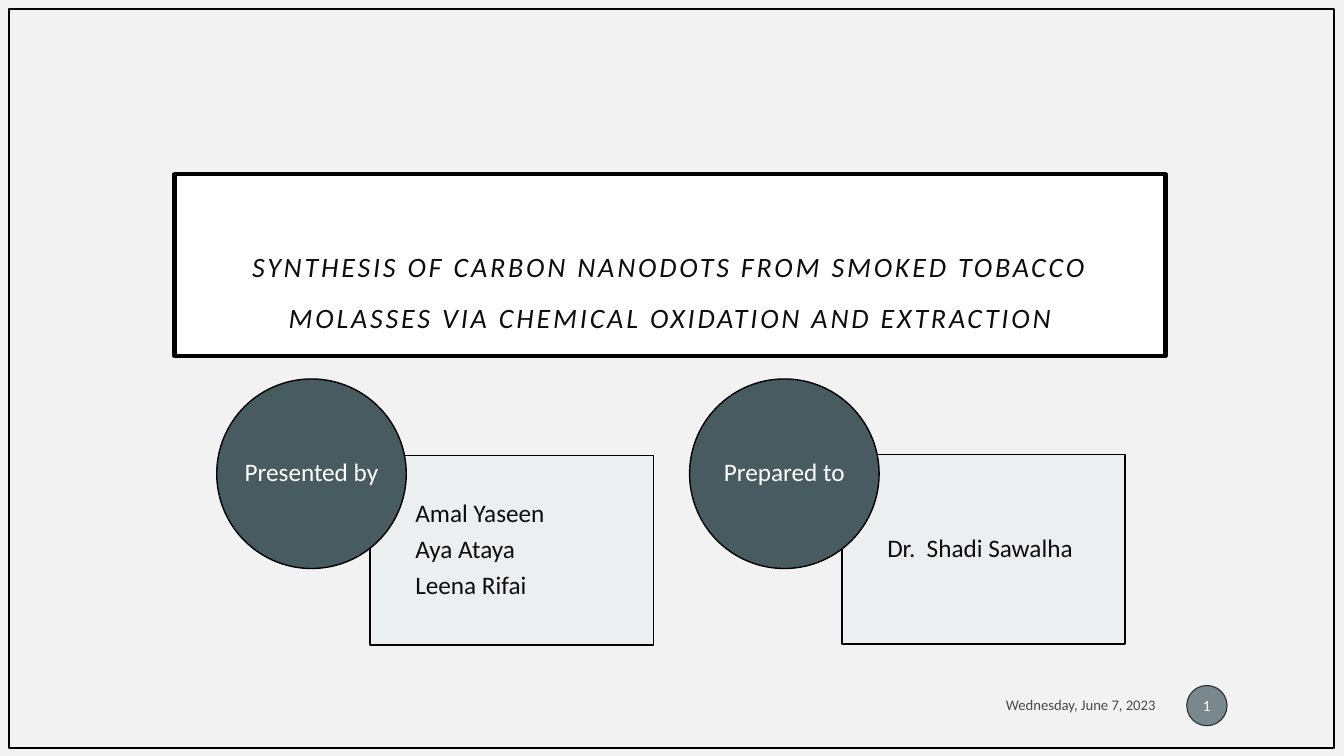
from lxml import etree
from pptx import Presentation
from pptx.dml.color import RGBColor
from pptx.enum.shapes import MSO_SHAPE
from pptx.enum.text import MSO_ANCHOR, PP_ALIGN
from pptx.oxml.ns import qn
from pptx.util import Inches, Pt

RECT, OVAL = MSO_SHAPE.RECTANGLE, MSO_SHAPE.OVAL
LEFT, CENTER, RIGHT = PP_ALIGN.LEFT, PP_ALIGN.CENTER, PP_ALIGN.RIGHT
MIDDLE = MSO_ANCHOR.MIDDLE

BACKGROUND = RGBColor(0xF2, 0xF2, 0xF2)
WHITE = RGBColor(0xFF, 0xFF, 0xFF)
BLACK = RGBColor(0x00, 0x00, 0x00)
INK = RGBColor(0x0D, 0x0D, 0x0D)
SLATE = RGBColor(0x47, 0x5B, 0x61)
BADGE_EDGE = RGBColor(0x25, 0x29, 0x2B)
MIST = RGBColor(0xEB, 0xEF, 0xF0)

FONT = "Calibri"
WIDTH, HEIGHT = Inches(13.33), Inches(7.5)

# Shares of the slide, in percent of its width and height
CIRCLE_W, CIRCLE_H = 14.1, 25.07
CIRCLE_TOP = 50.13
PANEL_W = 21.08

# Circle label, circle left, panel left, panel top, names
PEOPLE = [
    ("Presented by", 16.13, 27.53, 60.27,
     ["Amal Yaseen", "Aya Ataya", "Leena Rifai"]),
    ("Prepared to", 51.31, 62.64, 60.13, ["Dr.  Shadi Sawalha"]),
]


def place(left, top, width, height):
    """Turn percentages of the slide into lengths."""
    return (int(WIDTH * left / 100), int(HEIGHT * top / 100),
            int(WIDTH * width / 100), int(HEIGHT * height / 100))


def set_opacity(color_format, percent):
    color = color_format._xFill.find(qn("a:solidFill"))[0] \
        if hasattr(color_format._xFill, "find") and \
        color_format._xFill.find(qn("a:solidFill")) is not None \
        else color_format._xFill[0]
    etree.SubElement(color, qn("a:alpha"), val=str(percent * 1000))


def add_box(slide, kind, box, fill, edge, edge_width, opacity=100):
    shape = slide.shapes.add_shape(kind, *place(*box))
    shape.shadow.inherit = False
    if fill is None:
        shape.fill.background()
    else:
        shape.fill.solid()
        shape.fill.fore_color.rgb = fill
        if opacity < 100:
            color = shape._element.spPr.find(qn("a:solidFill"))[0]
            etree.SubElement(color, qn("a:alpha"), val=str(opacity * 1000))
    shape.line.color.rgb = edge
    shape.line.width = Pt(edge_width)
    return shape


def write(shape, lines, size, color, align, insets=(0, 0, 0, 0), wrap=True,
          spacing=1.0, after=0):
    """Fill a shape with paragraphs; insets are left, top, right, bottom."""
    frame = shape.text_frame
    frame.word_wrap = wrap
    frame.vertical_anchor = MIDDLE
    (frame.margin_left, frame.margin_top,
     frame.margin_right, frame.margin_bottom) = map(Inches, insets)
    frame.text = "\n".join(lines)
    for paragraph in frame.paragraphs:
        paragraph.alignment = align
        paragraph.line_spacing = spacing
        paragraph.space_after = Pt(after)
        paragraph.font.name = FONT
        paragraph.font.size = Pt(size)
        paragraph.font.color.rgb = color
    return frame


def add_title(slide, text):
    title = add_box(slide, RECT, (12.98, 23.07, 73.74, 24), WHITE, BLACK, 3)
    frame = write(title, [text], 20, INK, CENTER, (0.3, 0.56, 0.3, 0.2),
                  spacing=1.5)
    paragraph = frame.paragraphs[0]
    paragraph.font.italic = True
    # Letter spacing of 2 pt
    paragraph.runs[0].font._element.set("spc", "200")


def add_people(slide, label, circle_left, panel_left, panel_top, names):
    panel = add_box(slide, RECT, (panel_left, panel_top, PANEL_W, CIRCLE_H),
                    MIST, BLACK, 1, opacity=90)
    write(panel, names, 18, INK, LEFT, (0.45, 0.14, 0.14, 0.14),
          spacing=0.9, after=6.3)
    circle = add_box(slide, OVAL,
                     (circle_left, CIRCLE_TOP, CIRCLE_W, CIRCLE_H),
                     SLATE, BLACK, 1)
    write(circle, [label], 18, WHITE, CENTER, wrap=False, spacing=0.9)


def add_footer(slide, date, number):
    date_box = slide.shapes.add_textbox(*place(64.14, 90.93, 22.58, 4.67))
    write(date_box, [date], 10.5, RGBColor(0x49, 0x49, 0x49), RIGHT,
          (0.1, 0.05, 0.1, 0.05))
    badge = add_box(slide, OVAL, (88.3, 90.67, 3, 5.33), SLATE, BADGE_EDGE,
                    0.75, opacity=70)
    write(badge, [number], 11, WHITE, CENTER, (0.02, 0.05, 0.02, 0.05))


def main():
    deck = Presentation()
    deck.slide_width, deck.slide_height = WIDTH, HEIGHT
    slide = deck.slides.add_slide(deck.slide_layouts[6])
    slide.background.fill.solid()
    slide.background.fill.fore_color.rgb = BACKGROUND

    add_title(slide, "SYNTHESIS OF CARBON NANODOTS FROM SMOKED TOBACCO "
                     "MOLASSES VIA CHEMICAL OXIDATION AND EXTRACTION")
    add_footer(slide, "Wednesday, June 7, 2023", number="1")
    for group in PEOPLE:
        add_people(slide, *group)

    # Frame around the slide
    add_box(slide, RECT, (0.68, 1.2, 98.57, 97.73), None, BLACK, 1.5)
    deck.save("out.pptx")


if __name__ == "__main__":
    main()
